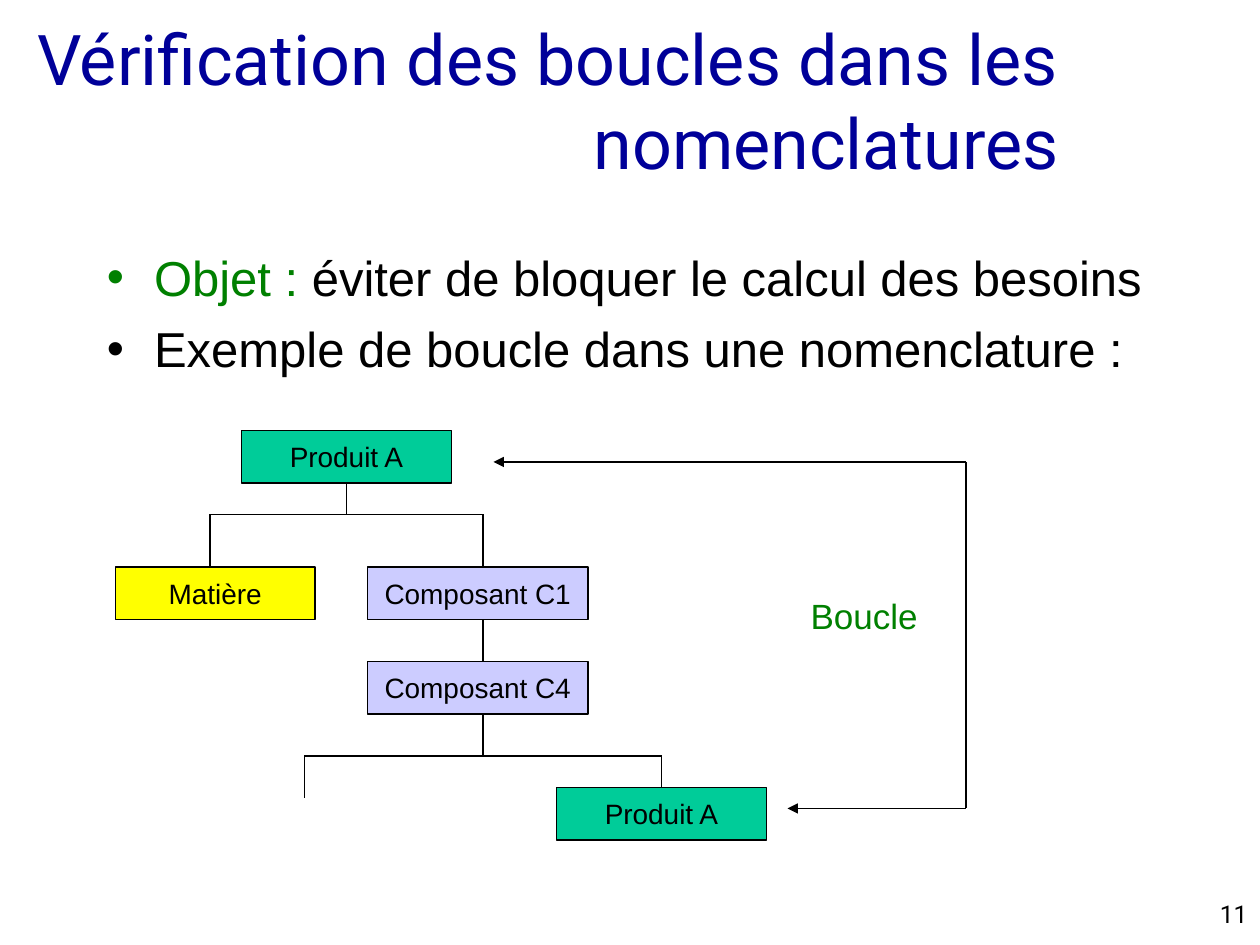
from dataclasses import dataclass

from lxml.etree import SubElement
from pptx import Presentation
from pptx.dml.color import RGBColor as RGB
from pptx.enum.shapes import MSO_CONNECTOR as Connector
from pptx.enum.shapes import MSO_SHAPE as Shape
from pptx.enum.text import MSO_ANCHOR as Anchor
from pptx.enum.text import MSO_AUTO_SIZE as AutoSize
from pptx.enum.text import PP_ALIGN as Align
from pptx.oxml.ns import qn
from pptx.util import Pt

PX = 914400 // 120
TOP, BOTTOM = 0, 2


@dataclass(frozen=True)
class Theme:
    black: str = "000000"
    title: str = "000099"
    accent: str = "008000"
    product: str = "00CC99"
    material: str = "FFFF00"
    component: str = "CCCCFF"
    heading_font: str = "Roboto"
    body_font: str = "Arial"
    title_size: int = 40
    body_size: int = 28
    label_size: int = 20
    box_size: int = 16
    number_size: int = 14
    line_width: float = 0.75


THEME = Theme()

TITLE = "Vérification des boucles dans les nomenclatures"
BULLETS = [
    [("Objet :", THEME.accent), (" éviter de bloquer le calcul des besoins", THEME.black)],
    [("Exemple de boucle dans une nomenclature :", THEME.black)],
]
LOOP_LABEL = "Boucle"
PAGE_NUMBER = "11"

BOX_HEIGHT = 50
BOXES = {
    "root": ("Produit A", 230, 410, 200, THEME.product),
    "material": ("Matière", 110, 540, 190, THEME.material),
    "c1": ("Composant C1", 350, 540, 210, THEME.component),
    "c4": ("Composant C4", 350, 630, 210, THEME.component),
    "repeat": ("Produit A", 530, 750, 200, THEME.product),
}

ROOT_X, MATERIAL_X, TRUNK_X, BRANCH_X, REPEAT_X = 330, 200, 460, 290, 630
UPPER_Y, LOWER_Y = 490, 720
LOOP_X, LOOP_TOP, LOOP_BOTTOM = 920, 440, 770

TREE_LINES = [
    (MATERIAL_X, UPPER_Y, TRUNK_X, UPPER_Y),
    (MATERIAL_X, UPPER_Y, MATERIAL_X, 540),
    (TRUNK_X, UPPER_Y, TRUNK_X, 540),
    (TRUNK_X, 590, TRUNK_X, 630),
    (TRUNK_X, 680, TRUNK_X, LOWER_Y),
    (BRANCH_X, LOWER_Y, REPEAT_X, LOWER_Y),
    (BRANCH_X, LOWER_Y, BRANCH_X, 760),
    (LOOP_X, LOOP_TOP, LOOP_X, LOOP_BOTTOM),
]
LOOP_ARROWS = [
    (LOOP_X, LOOP_TOP, 470, LOOP_TOP),
    (LOOP_X, LOOP_BOTTOM, 750, LOOP_BOTTOM),
]


def scale(*lengths):
    return [length * PX for length in lengths]


def style(para, font, size, color=None, align=None):
    para.font.name = font
    para.font.size = Pt(size)
    if color:
        para.font.color.rgb = RGB.from_string(color)
    para.alignment = align


def add_text(page, text, area, font, size, color, align, wrap=True, anchor=Anchor.TOP):
    box = page.shapes.add_textbox(*scale(*area))
    frame = box.text_frame
    frame.word_wrap = wrap
    frame.vertical_anchor = anchor
    frame.text = text
    style(frame.paragraphs[0], font, size, color, align)
    return box


def add_title(page):
    title = page.shapes.title
    title.left, title.top, title.width, title.height = scale(20, 20, 1000, 150)
    frame = title.text_frame
    frame.text = TITLE
    frame.auto_size = AutoSize.NONE
    frame.vertical_anchor = Anchor.MIDDLE
    style(frame.paragraphs[0], THEME.heading_font, THEME.title_size, THEME.title, Align.RIGHT)


def add_bullets(page):
    frame = page.shapes.add_textbox(*scale(90, 230, 1020, 195)).text_frame
    frame.word_wrap = True
    for index, parts in enumerate(BULLETS):
        para = frame.add_paragraph() if index else frame.paragraphs[0]
        properties = para._p.get_or_add_pPr()
        properties.set("marL", str(45 * PX))
        properties.set("indent", str(-45 * PX))
        SubElement(properties, qn("a:buFont"), typeface=THEME.body_font)
        SubElement(properties, qn("a:buChar"), char="•")
        para.space_before = Pt(7)
        style(para, THEME.body_font, THEME.body_size)
        for text, color in parts:
            span = para.add_run()
            span.text = text
            span.font.color.rgb = RGB.from_string(color)


def add_box(page, text, left, top, width, fill):
    box = page.shapes.add_shape(Shape.RECTANGLE, *scale(left, top, width, BOX_HEIGHT))
    box.shadow.inherit = False
    box.fill.solid()
    box.fill.fore_color.rgb = RGB.from_string(fill)
    box.line.color.rgb = RGB.from_string(THEME.black)
    box.line.width = Pt(THEME.line_width)
    frame = box.text_frame
    frame.word_wrap = False
    frame.vertical_anchor = Anchor.MIDDLE
    frame.text = text
    style(frame.paragraphs[0], THEME.body_font, THEME.box_size, THEME.black, Align.CENTER)
    return box


def add_line(page, ends, arrow=False):
    line = page.shapes.add_connector(Connector.STRAIGHT, *scale(*ends))
    line.line.color.rgb = RGB.from_string(THEME.black)
    line.line.width = Pt(THEME.line_width)
    if arrow:
        SubElement(line.line._get_or_add_ln(), qn("a:tailEnd"), type="triangle")
    SubElement(line._element.spPr, qn("a:effectLst"))
    return line


def main():
    deck = Presentation()
    deck.slide_width, deck.slide_height = scale(1200, 900)
    page = deck.slides.add_slide(deck.slide_layouts[5])

    add_title(page)
    add_bullets(page)
    boxes = {name: add_box(page, *details) for name, details in BOXES.items()}
    for ends in TREE_LINES:
        add_line(page, ends)
    for ends in LOOP_ARROWS:
        add_line(page, ends, arrow=True)

    root_stem = add_line(page, (ROOT_X, 460, ROOT_X, UPPER_Y))
    root_stem.begin_connect(boxes["root"], BOTTOM)
    repeat_stem = add_line(page, (REPEAT_X, LOWER_Y, REPEAT_X, 750))
    repeat_stem.end_connect(boxes["repeat"], TOP)

    add_text(page, LOOP_LABEL, (760, 560, 126, 52), THEME.body_font, THEME.label_size,
             THEME.accent, Align.CENTER, wrap=False, anchor=Anchor.MIDDLE)
    add_text(page, PAGE_NUMBER, (950, 850, 250, 30), THEME.heading_font, THEME.number_size,
             THEME.black, Align.RIGHT)
    deck.save("out.pptx")


if __name__ == "__main__":
    main()
